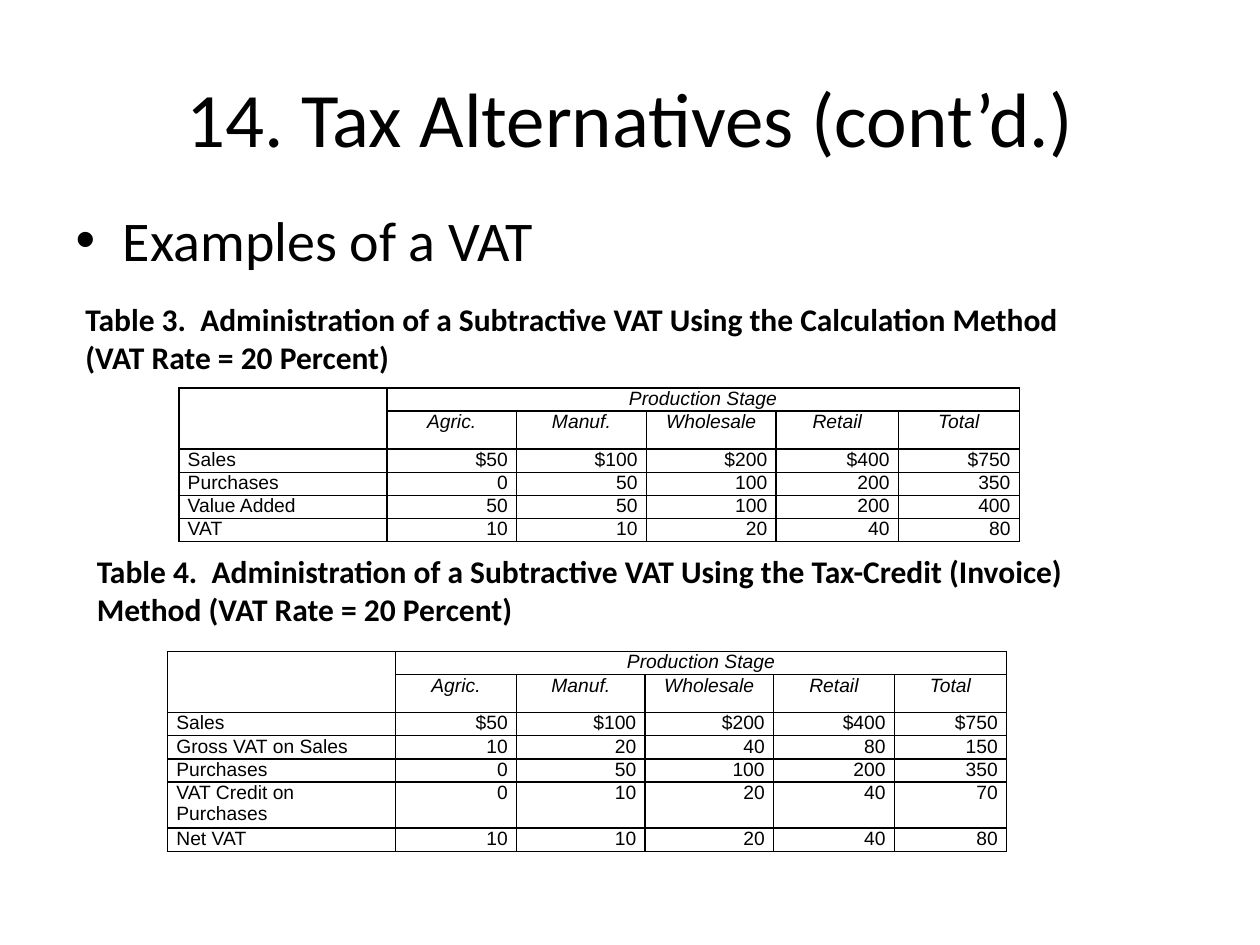
from dataclasses import dataclass

from lxml.etree import SubElement
from pptx import Presentation
from pptx.dml.color import RGBColor
from pptx.enum.text import MSO_ANCHOR, PP_ALIGN
from pptx.oxml.ns import qn
from pptx.util import Inches, Pt

COLORS = {"text": "000000", "border": "000000"}
STAGES = ["Agric.", "Manuf.", "Wholesale", "Retail", "Total"]
SALES = ["Sales", "$50", "$100", "$200", "$400", "$750"]
PURCHASES = ["Purchases", "0", "50", "100", "200", "350"]


@dataclass
class VatExample:
    caption: str
    caption_box: tuple[float, float, float, float]
    left: float
    top: float
    height: float
    columns: list[float]
    rows: list[list[str]]
    wrapped_label: str = ""


EXAMPLES = [
    VatExample(
        "Table 3.  Administration of a Subtractive VAT Using the Calculation Method "
        "(VAT Rate = 20 Percent)",
        (0.58, 2.33, 8.25, 0.71), 1.42, 3.08, 1.07,
        [1.65, 1.03, 1.03, 1.03, 0.97, 0.96],
        [SALES, PURCHASES,
         ["Value Added", "50", "50", "100", "200", "400"],
         ["VAT", "10", "10", "20", "40", "80"]],
    ),
    VatExample(
        "Table 4.  Administration of a Subtractive VAT Using the Tax-Credit (Invoice) "
        "Method (VAT Rate = 20 Percent)",
        (0.67, 4.33, 8.17, 0.71), 1.33, 5.17, 1.47,
        [1.81, 0.96, 1.02, 1.02, 0.96, 0.89],
        [SALES,
         ["Gross VAT on Sales", "10", "20", "40", "80", "150"],
         PURCHASES,
         ["VAT Credit on Purchases", "0", "10", "20", "40", "70"],
         ["Net VAT", "10", "10", "20", "40", "80"]],
        wrapped_label="VAT Credit on Purchases",
    ),
]


def write_text(frame, text: str, *, size: float, font: str = "Calibri",
               bold: bool = False, italic: bool = False, align=None) -> None:
    paragraph = frame.paragraphs[0]
    paragraph.alignment = align
    run = paragraph.add_run()
    run.text = text
    run.font.size = Pt(size)
    run.font.name = font
    run.font.bold = bold
    run.font.italic = italic
    run.font.color.rgb = RGBColor.from_string(COLORS["text"])


def place(shape, left: float, top: float, width: float, height: float) -> None:
    shape.left, shape.top = Inches(left), Inches(top)
    shape.width, shape.height = Inches(width), Inches(height)


def format_cell(cell) -> None:
    """Give a cell narrow margins, four borders and no fill."""
    cell.margin_left = cell.margin_right = Inches(0.07)
    cell.margin_top = cell.margin_bottom = 0
    properties = cell._tc.get_or_add_tcPr()
    for side in ("a:lnL", "a:lnR", "a:lnT", "a:lnB"):
        line = SubElement(properties, qn(side), w=str(Pt(1)))
        solid = SubElement(line, qn("a:solidFill"))
        SubElement(solid, qn("a:srgbClr"), val=COLORS["border"])
    cell.fill.background()


def add_caption(slide, example: VatExample) -> None:
    caption = slide.shapes.add_textbox(*map(Inches, example.caption_box))
    caption.text_frame.word_wrap = True
    write_text(caption.text_frame, example.caption, size=18, bold=True)


def add_vat_table(slide, example: VatExample) -> None:
    blanks = [""] * (len(STAGES) - 1)
    header = [["", "Production Stage", *blanks], ["", *STAGES]]
    grid = header + example.rows
    line_counts = [2 if example.wrapped_label and row[0] == example.wrapped_label else 1
                   for row in grid]
    table = slide.shapes.add_table(
        len(grid), len(example.columns), Inches(example.left), Inches(example.top),
        Inches(sum(example.columns)), Inches(example.height)).table
    table.first_row = table.horz_banding = False
    for column, width in zip(table.columns, example.columns):
        column.width = Inches(width)
    for row, lines in zip(table.rows, line_counts):
        row.height = Inches(example.height * lines / sum(line_counts))

    for r, values in enumerate(grid):
        in_header = r < len(header)
        for c, value in enumerate(values):
            cell = table.cell(r, c)
            format_cell(cell)
            if in_header:
                align = PP_ALIGN.CENTER
            else:
                align = PP_ALIGN.RIGHT if c else PP_ALIGN.LEFT
            write_text(cell.text_frame, value, size=11, font="Arial",
                       italic=in_header, align=align)
    table.cell(0, 0).merge(table.cell(1, 0))
    table.cell(0, 1).merge(table.cell(0, len(STAGES)))


def main() -> None:
    presentation = Presentation()
    presentation.slide_width, presentation.slide_height = Inches(10), Inches(7.5)
    slide = presentation.slides.add_slide(presentation.slide_layouts[1])

    title, body = slide.placeholders
    place(title, 0.5, 0.3, 9, 1.25)
    title.text_frame.vertical_anchor = MSO_ANCHOR.MIDDLE
    write_text(title.text_frame, "14. Tax Alternatives (cont’d.)", size=44,
               align=PP_ALIGN.CENTER)
    place(body, 0.5, 1.58, 9, 0.58)
    write_text(body.text_frame, "Examples of a VAT", size=32)

    for example in EXAMPLES:
        add_caption(slide, example)
        add_vat_table(slide, example)
    presentation.save("out.pptx")


if __name__ == "__main__":
    main()
